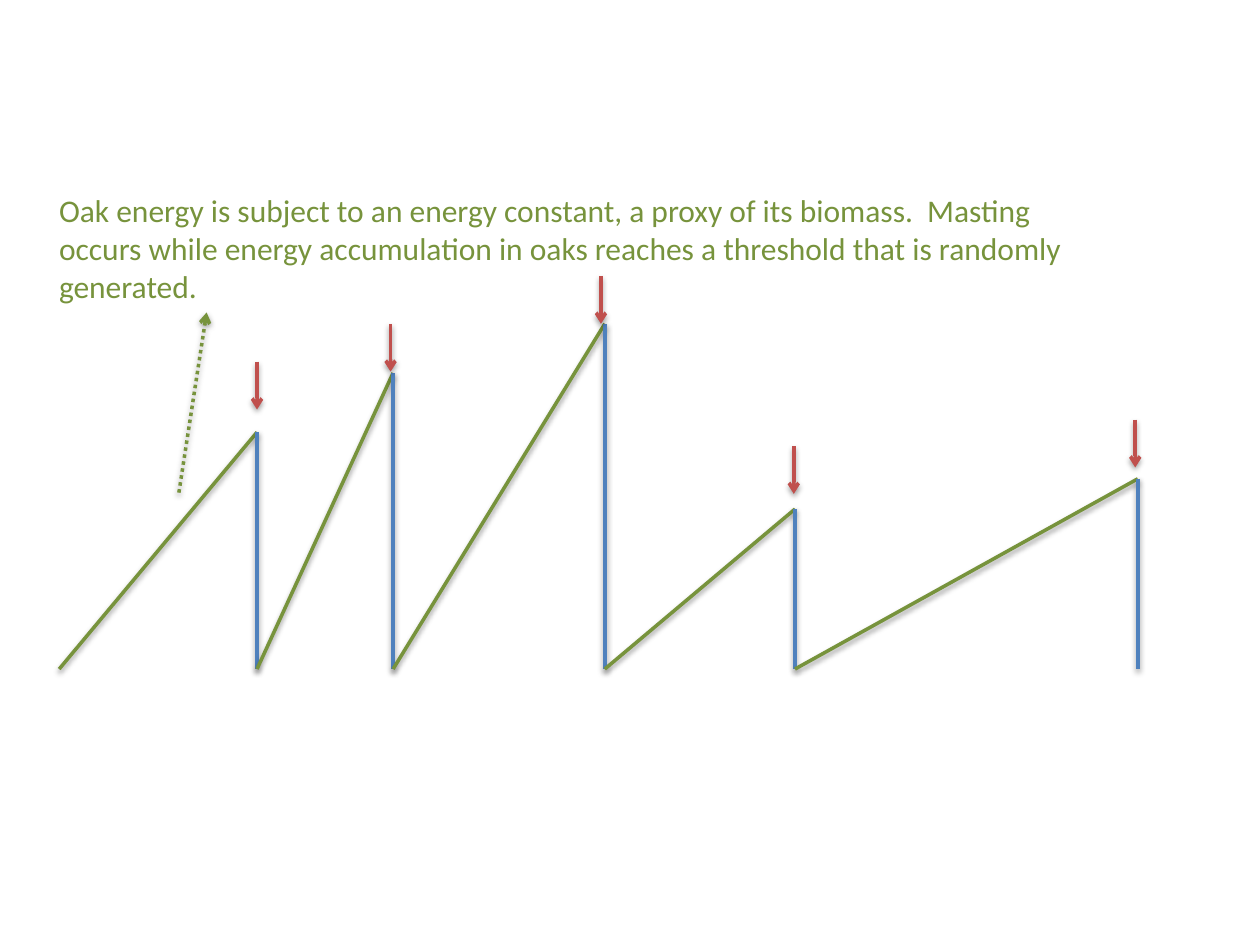
from lxml import etree
from pptx import Presentation
from pptx.dml.color import RGBColor
from pptx.enum.dml import MSO_LINE
from pptx.enum.shapes import MSO_CONNECTOR
from pptx.enum.text import MSO_AUTO_SIZE
from pptx.oxml import parse_xml
from pptx.oxml.ns import qn
from pptx.util import Inches, Pt

STRAIGHT = MSO_CONNECTOR.STRAIGHT
DOTTED = MSO_LINE.ROUND_DOT
FIT_SHAPE = MSO_AUTO_SIZE.SHAPE_TO_FIT_TEXT
COLORS = {"growth": "77933C", "masting": "4F81BD", "threshold": "C0504D"}
SHADOW = (
    '<a:effectLst xmlns:a="http://schemas.openxmlformats.org/drawingml/2006/main">'
    '<a:outerShdw blurRad="40000" dist="20000" dir="5400000" rotWithShape="0">'
    '<a:srgbClr val="000000"><a:alpha val="38000"/></a:srgbClr>'
    '</a:outerShdw></a:effectLst>'
)

prs = Presentation()
prs.slide_width = Inches(10)
prs.slide_height = Inches(7.5)
slide = prs.slides.add_slide(prs.slide_layouts[6])


def add_line(start, end, color, arrow=False, dash=None):
    line = slide.shapes.add_connector(STRAIGHT, *map(Inches, start + end))
    line.line.color.rgb = RGBColor.from_string(COLORS[color])
    line.line.width = Pt(2)
    if dash is not None:
        line.line.dash_style = dash
    if arrow:
        outline = line.line._get_or_add_ln()
        etree.SubElement(outline, qn("a:tailEnd"), type="arrow")
    line._element.spPr.append(parse_xml(SHADOW))


baseline = 5.31
cycle_start = 0.47
peaks = [(2.04, 3.43), (3.12, 2.96), (4.8, 2.57), (6.31, 4.04), (9.03, 3.8)]
for peak_x, peak_y in peaks:
    add_line((cycle_start, baseline), (peak_x, peak_y), "growth")
    add_line((peak_x, peak_y), (peak_x, baseline), "masting")
    cycle_start = peak_x

explanation = slide.shapes.add_textbox(
    Inches(0.37), Inches(1.47), Inches(8.28), Inches(1.01)
)
frame = explanation.text_frame
frame.word_wrap = True
frame.auto_size = FIT_SHAPE
paragraph = frame.paragraphs[0]
paragraph.text = (
    "Oak energy is subject to an energy constant, a proxy of its biomass.  "
    "Masting occurs while energy accumulation in oaks reaches a threshold "
    "that is randomly generated."
)
paragraph.font.name = "Calibri"
paragraph.font.size = Pt(18)
paragraph.font.color.rgb = RGBColor.from_string(COLORS["growth"])

add_line((1.42, 3.91), (1.64, 2.48), "growth", arrow=True, dash=DOTTED)

threshold_length = 0.38
threshold_tops = [(2.04, 2.87), (3.1, 2.57), (4.77, 2.19), (6.3, 3.54), (9.01, 3.33)]
for x, top in threshold_tops:
    add_line((x, top), (x, top + threshold_length), "threshold", arrow=True)

prs.save("out.pptx")
